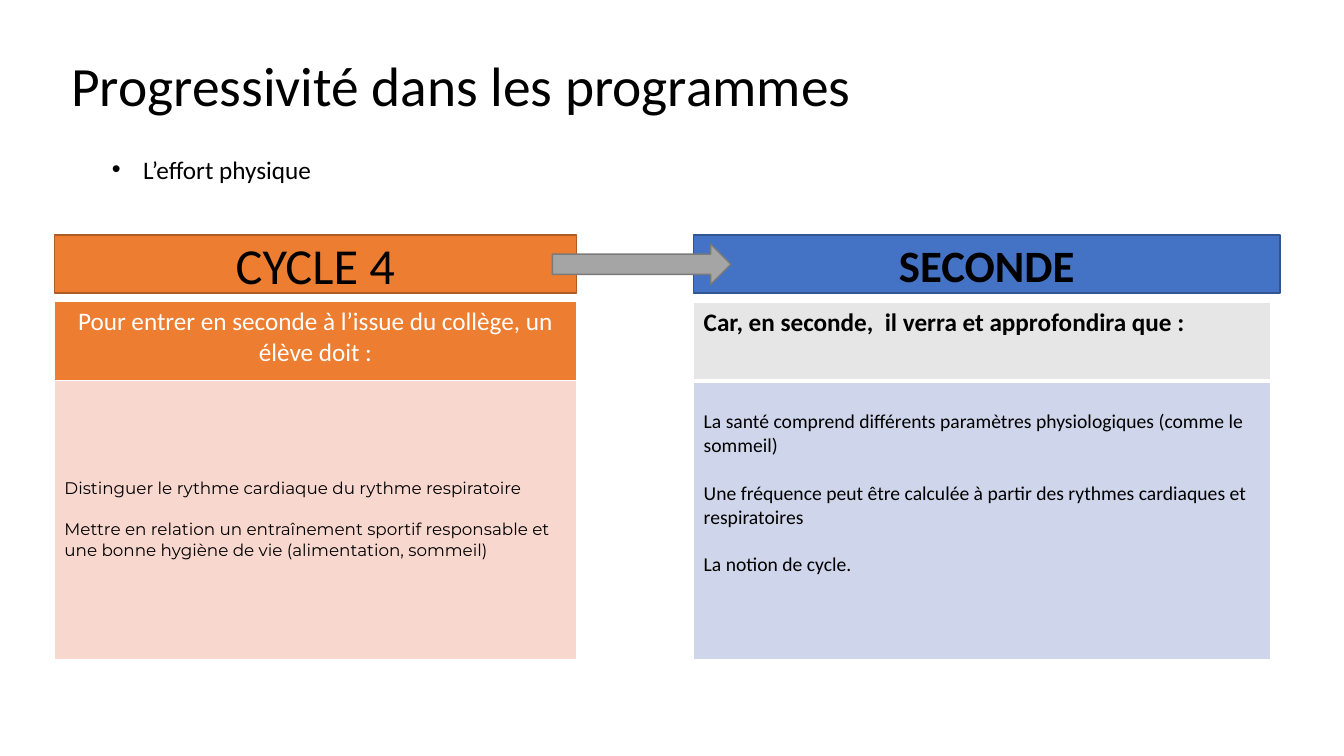
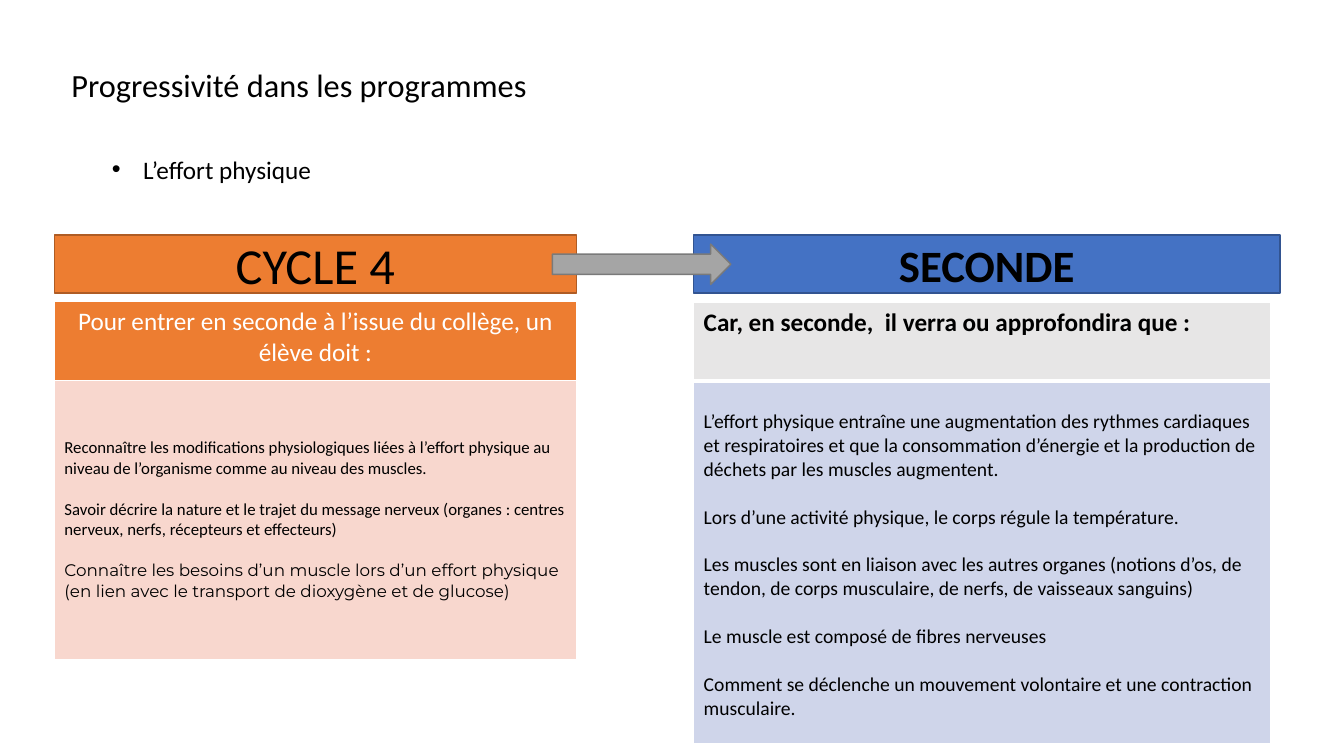
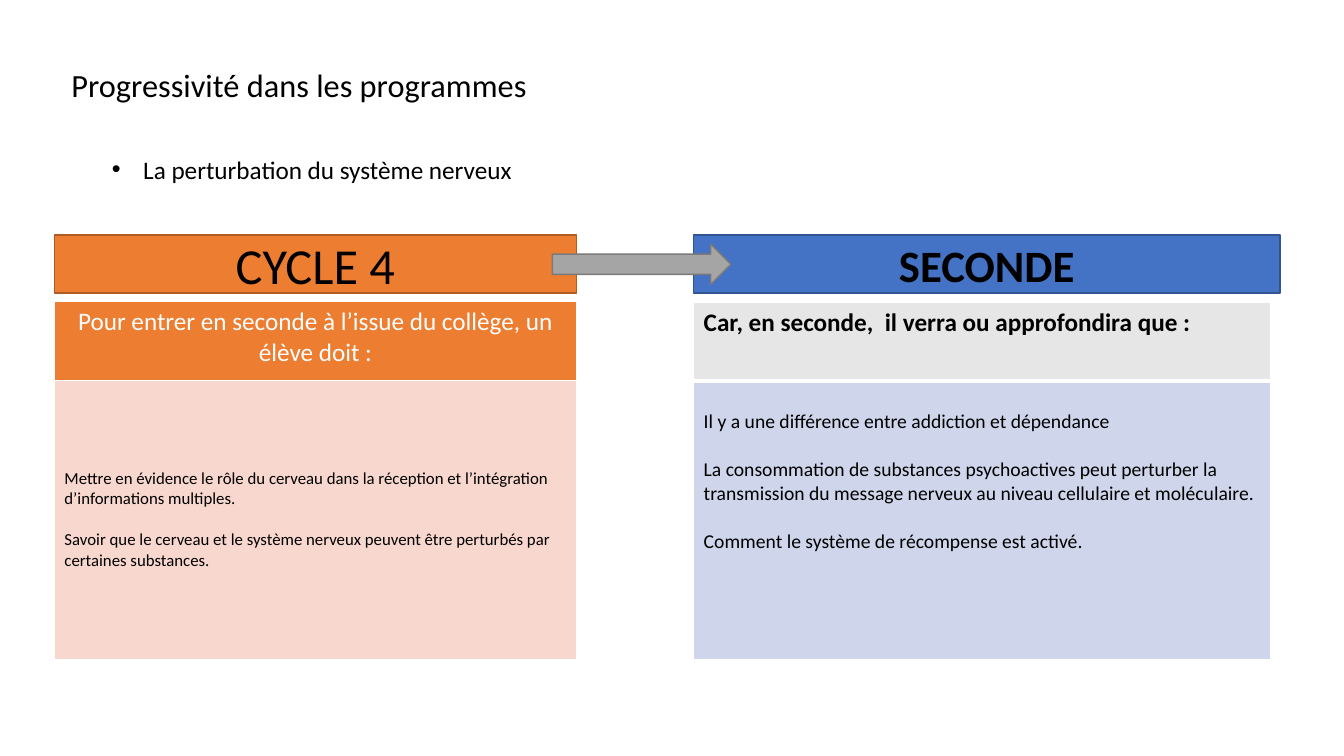
from lxml.etree import SubElement
from pptx import Presentation
from pptx.dml.color import RGBColor
from pptx.enum.shapes import MSO_SHAPE
from pptx.enum.text import MSO_ANCHOR, PP_ALIGN
from pptx.oxml.ns import qn
from pptx.util import Cm, Pt

# Content
TITLE = "Progressivité dans les programmes"
NEED = "Pour entrer en seconde à l’issue du collège, un élève doit :"
BODY, ALT = "Calibri", "Montserrat"

SLIDES = [
    {
        "topic": "L’effort physique", "wide": 5.8,
        "size": 39.6, "lead": 0.9,
        "left": [
            ("Distinguer le rythme cardiaque du rythme respiratoire", ALT),
            ("Mettre en relation un entraînement sportif responsable et une "
             "bonne hygiène de vie (alimentation, sommeil)", ALT),
        ],
        "head": "Car, en seconde,  il verra et approfondira que :",
        "right": [
            "La santé comprend différents paramètres physiologiques "
            "(comme le sommeil)",
            "Une fréquence peut être calculée à partir des rythmes cardiaques "
            "et respiratoires",
            "La notion de cycle.",
        ],
        "tall": 7.01,
    },
    {
        "topic": "L’effort physique", "wide": 5.8,
        "size": 23.1, "lead": 0.7,
        "left": [
            ("Reconnaître les modifications physiologiques liées à l’effort "
             "physique au niveau de l’organisme comme au niveau des muscles.",
             BODY),
            ("Savoir décrire la nature et le trajet du message nerveux "
             "(organes : centres nerveux, nerfs, récepteurs et effecteurs)",
             BODY),
            ("Connaître les besoins d’un muscle lors d’un effort physique "
             "(en lien avec le transport de dioxygène et de glucose)", ALT),
        ],
        "head": "Car, en seconde,  il verra ou approfondira que :",
        "right": [
            "L’effort physique entraîne une augmentation des rythmes "
            "cardiaques et respiratoires et que la consommation d’énergie et "
            "la production de déchets par les muscles augmentent.",
            "Lors d’une activité physique, le corps régule la température.",
            "Les muscles sont en liaison avec les autres organes (notions "
            "d’os, de tendon, de corps musculaire, de nerfs, de vaisseaux "
            "sanguins)",
            "Le muscle est composé de fibres nerveuses",
            "Comment se déclenche un mouvement volontaire et une contraction "
            "musculaire.",
        ],
        "tall": 9.14,
    },
    {
        "topic": "La perturbation du système nerveux", "wide": 11.35,
        "size": 23.1, "lead": 0.7,
        "left": [
            ("Mettre en évidence le rôle du cerveau dans la réception et "
             "l’intégration d’informations multiples.", BODY),
            ("Savoir que le cerveau et le système nerveux peuvent être "
             "perturbés par certaines substances.", BODY),
        ],
        "head": "Car, en seconde,  il verra ou approfondira que :",
        "right": [
            "Il y a une différence entre addiction et dépendance",
            "La consommation de substances psychoactives peut perturber la "
            "transmission du message nerveux au niveau cellulaire et "
            "moléculaire.",
            "Comment le système de récompense est activé.",
        ],
        "tall": 7.01,
    },
]

# Shared look, lengths in cm
BLACK, WHITE = "000000", "FFFFFF"
ORANGE, BLUE, GREY = "ED7D31", "4472C4", "A5A5A5"
PINK, PALE, SILVER = "F8D7CE", "CFD5EA", "E7E6E6"
LEFT, RIGHT = 1.37, 17.48
BAND, HIGH = 5.92, 1.47
HEAD = 1.98
LINE = 1.22  # line height as a share of the text size


def color(code):
    return RGBColor.from_string(code)


def style(para, size, ink=BLACK, bold=False, font=BODY):
    for run in para.runs:
        run.font.size = Pt(size)
        run.font.name = font
        run.font.bold = bold
        run.font.color.rgb = color(ink)


def fill_text(frame, items, size):
    """Write (text, font) items, one blank line's height apart."""
    for i, (text, font) in enumerate(items):
        para = frame.add_paragraph() if i else frame.paragraphs[0]
        para.text = text
        para.space_before = Pt(round(size * LINE, 1) if i else 0)
        style(para, size, font=font)


def add_text(slide, box, text, size):
    frame = slide.shapes.add_textbox(*map(Cm, box)).text_frame
    frame.word_wrap = True
    frame.text = text
    para = frame.paragraphs[0]
    style(para, size)
    return frame, para


def add_block(slide, kind, box, fill, edge):
    shape = slide.shapes.add_shape(kind, *map(Cm, box))
    shape.shadow.inherit = False
    shape.fill.solid()
    shape.fill.fore_color.rgb = color(fill)
    shape.line.color.rgb = color(edge)
    shape.line.width = Pt(1)
    return shape


def add_band(slide, x, width, text, size, fill, edge, bold):
    band = add_block(slide, MSO_SHAPE.RECTANGLE, (x, BAND, width, HIGH),
                     fill, edge)
    frame = band.text_frame
    frame.vertical_anchor = MSO_ANCHOR.MIDDLE
    frame.text = text
    para = frame.paragraphs[0]
    para.alignment = PP_ALIGN.CENTER
    style(para, size, bold=bold)


def paint(cell, fill, top, low):
    """White borders, then the fill."""
    props = cell._tc.get_or_add_tcPr()
    for side, width in zip("LRTB", (1, 1, top, low)):
        line = SubElement(props, qn("a:ln" + side), w=str(Pt(width)))
        solid = SubElement(line, qn("a:solidFill"))
        SubElement(solid, qn("a:srgbClr"), val=WHITE)
    cell.fill.solid()
    cell.fill.fore_color.rgb = color(fill)


def add_grid(slide, x, y, width, tall, fills, rule):
    """One column: a heading cell over a body cell, a white rule between."""
    table = slide.shapes.add_table(
        2, 1, Cm(x), Cm(y), Cm(width), Cm(HEAD + tall)).table
    table.first_row = table.horz_banding = False
    table.rows[0].height, table.rows[1].height = Cm(HEAD), Cm(tall)
    head, body = table.cell(0, 0), table.cell(1, 0)
    paint(head, fills[0], 1, rule)
    paint(body, fills[1], rule, 1)
    return head, body


def add_bullet(para):
    props = para._p.get_or_add_pPr()
    step = Cm(0.79)
    props.set("marL", str(step))
    props.set("indent", str(-step))
    SubElement(props, qn("a:buFont"), typeface="Arial")
    SubElement(props, qn("a:buChar"), char="•")


def build(slide, data):
    # Topic and title
    _, topic = add_text(slide, (2.57, 3.76, data["wide"], 1.02),
                        data["topic"], 18)
    add_bullet(topic)
    frame, title = add_text(slide, (1.55, 1.73, 29.21, 1.02),
                            TITLE, data["size"])
    frame.vertical_anchor = MSO_ANCHOR.MIDDLE
    title.line_spacing = data["lead"]

    # Level bands
    add_band(slide, LEFT, 13.16, "CYCLE 4", 36, ORANGE, "AF5C24", False)
    add_band(slide, RIGHT, 14.78, "SECONDE", 32, BLUE, "325491", True)

    # What is needed
    head, body = add_grid(slide, LEFT, 7.6, 13.16, 7.03, (ORANGE, PINK), 1)
    head.text_frame.text = NEED
    para = head.text_frame.paragraphs[0]
    para.alignment = PP_ALIGN.CENTER
    style(para, 18, WHITE)
    body.vertical_anchor = MSO_ANCHOR.MIDDLE
    fill_text(body.text_frame, data["left"], 12)

    # What comes next
    head, body = add_grid(slide, RIGHT, 7.62, 14.53, data["tall"],
                          (SILVER, PALE), 3)
    head.text_frame.text = data["head"]
    style(head.text_frame.paragraphs[0], 18, bold=True)
    body.margin_top = Cm(0.73)
    fill_text(body.text_frame, [(text, BODY) for text in data["right"]], 14)

    # Arrow between the levels
    add_block(slide, MSO_SHAPE.RIGHT_ARROW, (13.92, 6.15, 4.5, 1.02),
              GREY, "7A7A7A")


def main():
    deck = Presentation()
    deck.slide_width, deck.slide_height = Cm(33.87), Cm(19.05)
    for data in SLIDES:
        build(deck.slides.add_slide(deck.slide_layouts[6]), data)
    deck.save("out.pptx")


if __name__ == "__main__":
    main()
